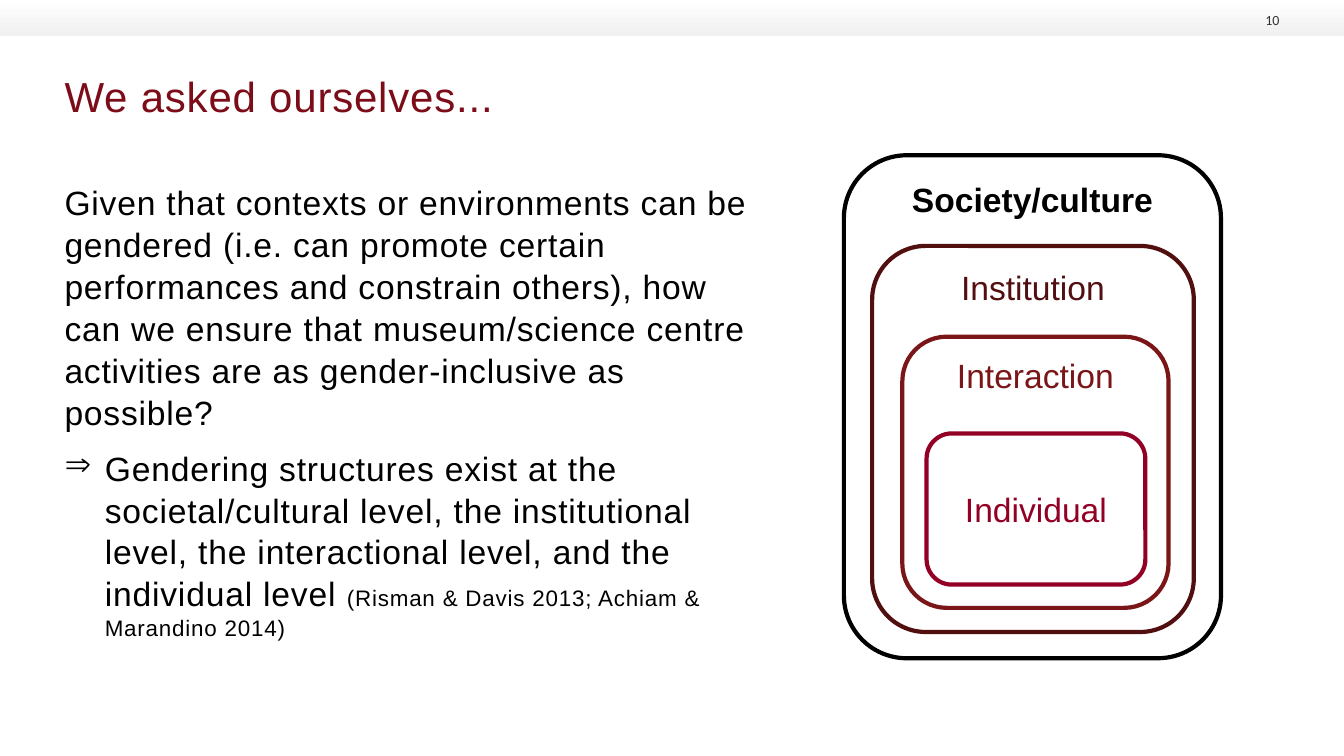
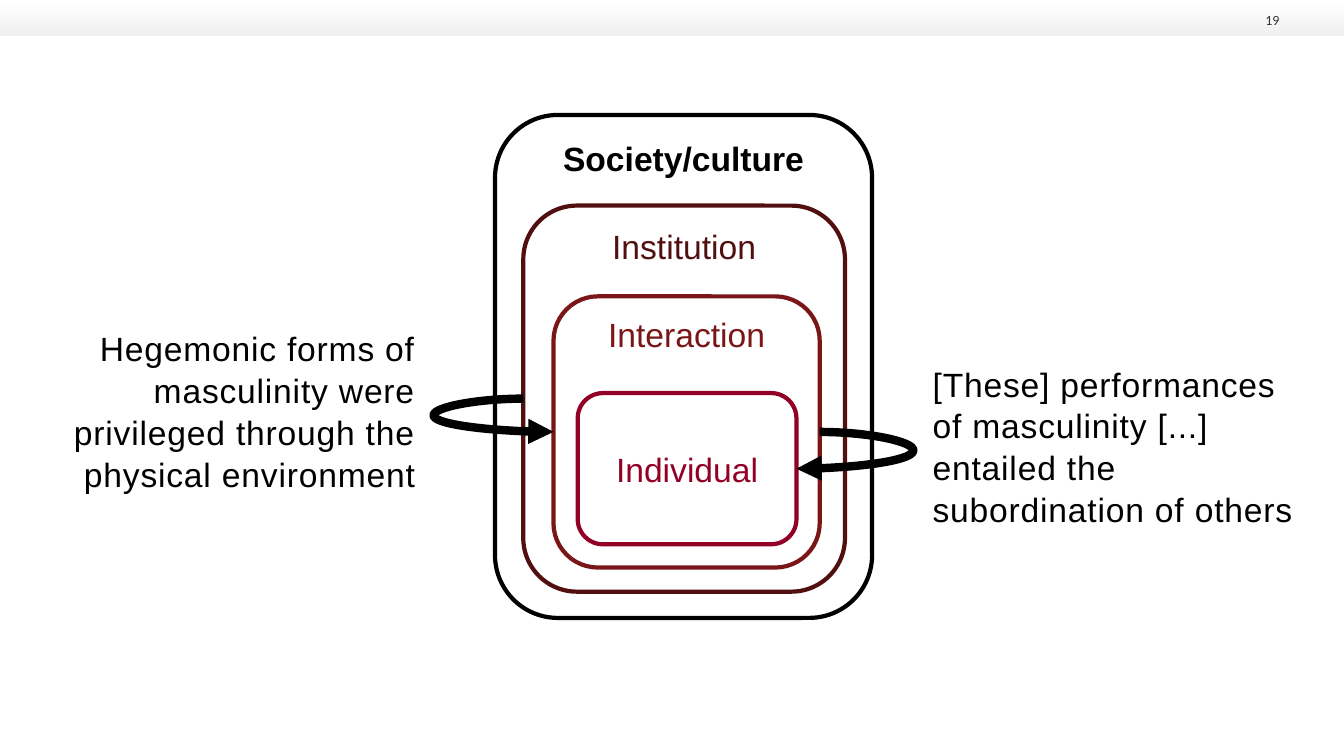
from dataclasses import dataclass

from lxml.etree import SubElement
from pptx import Presentation
from pptx.dml.color import RGBColor
from pptx.enum.shapes import MSO_CONNECTOR, MSO_SHAPE
from pptx.enum.text import MSO_ANCHOR, PP_ALIGN
from pptx.oxml.ns import qn
from pptx.util import Inches, Pt


@dataclass(frozen=True)
class Theme:
    """Colours, fonts and type sizes shared by the slides."""
    ink: str = "000000"
    paper: str = "FFFFFF"
    band_end: str = "EFF0EF"
    title: str = "7C0C17"
    number: str = "333333"
    institution: str = "520F10"
    interaction: str = "7A1618"
    individual: str = "920026"
    font: str = "Arial"
    number_font: str = "Calibri"
    title_size: int = 30
    body_size: int = 24
    citation_size: int = 16
    number_size: int = 10
    outline: int = 3
    arrow: int = 6
    tracking: int = 60
    line_spacing: float = 1.04
    paragraph_gap: int = 10


THEME = Theme()
SLIDE_WIDTH, SLIDE_HEIGHT = 13.33, 7.5

LEVELS = [
    ("Society/culture", THEME.ink, (0, 0, 3.74, 4.99)),
    ("Institution", THEME.institution, (0.28, 0.9, 3.19, 3.83)),
    ("Interaction", THEME.interaction, (0.58, 1.8, 2.64, 2.69)),
    ("Individual", THEME.individual, (0.82, 2.76, 2.17, 1.5)),
]


def rgb(colour):
    """Turn a hex string into a colour."""
    return RGBColor.from_string(colour)


def add_run(paragraph, text, size, colour=THEME.ink, font=THEME.font,
            bold=False, tracking=0):
    """Append one formatted run."""
    run = paragraph.add_run()
    run.text = text
    run.font.name = font
    run.font.size = Pt(size)
    run.font.bold = bold
    run.font.color.rgb = rgb(colour)
    if tracking:
        run.font._element.set("spc", str(tracking))


def add_frame(slide, box, anchor=MSO_ANCHOR.TOP):
    """Add a wrapping text box without insets and return its frame."""
    frame = slide.shapes.add_textbox(*map(Inches, box)).text_frame
    frame.word_wrap = True
    frame.vertical_anchor = anchor
    frame.margin_left = frame.margin_right = 0
    frame.margin_top = frame.margin_bottom = 0
    return frame


def add_prose(slide, box, text, align=PP_ALIGN.LEFT, size=THEME.body_size,
              colour=THEME.ink):
    """Place tracked prose in a box and return its frame."""
    frame = add_frame(slide, box)
    paragraph = frame.paragraphs[0]
    paragraph.alignment = align
    paragraph.line_spacing = THEME.line_spacing
    add_run(paragraph, text, size, colour, tracking=THEME.tracking)
    return frame


def add_conclusion(frame, statement, citation):
    """Append an arrow-bulleted statement with its citation."""
    paragraph = frame.add_paragraph()
    paragraph.line_spacing = THEME.line_spacing
    paragraph.space_before = Pt(THEME.paragraph_gap)
    properties = paragraph._p.get_or_add_pPr()
    properties.set("marL", str(Inches(0.4)))
    properties.set("indent", str(-Inches(0.4)))
    SubElement(properties, qn("a:buChar")).set("char", "⇒")
    for text, size in ((statement, THEME.body_size),
                       (citation, THEME.citation_size)):
        add_run(paragraph, text, size, tracking=THEME.tracking)


def add_header(slide, number):
    """Draw the gradient band and the slide number."""
    band = slide.shapes.add_shape(
        MSO_SHAPE.RECTANGLE, 0, 0, Inches(SLIDE_WIDTH), Inches(0.36))
    band.shadow.inherit = False
    band.line.fill.background()
    band.fill.gradient()
    band.fill.gradient_angle = 270
    for stop, colour in zip(band.fill.gradient_stops,
                            (THEME.paper, THEME.band_end)):
        stop.color.rgb = rgb(colour)
    paragraph = add_frame(
        slide, (12.27, 0.09, 0.42, 0.19), MSO_ANCHOR.BOTTOM).paragraphs[0]
    paragraph.alignment = PP_ALIGN.RIGHT
    add_run(paragraph, number, THEME.number_size, THEME.number,
            THEME.number_font)


def add_level(slide, label, colour, box, outermost, innermost):
    """Draw one labelled level of the nested model."""
    level = slide.shapes.add_shape(
        MSO_SHAPE.ROUNDED_RECTANGLE, *map(Inches, box))
    level.shadow.inherit = False
    level.fill.solid()
    level.fill.fore_color.rgb = rgb(THEME.paper)
    level.line.color.rgb = rgb(colour)
    level.line.width = Pt(THEME.outline)
    frame = level.text_frame
    frame.vertical_anchor = MSO_ANCHOR.MIDDLE if innermost else MSO_ANCHOR.TOP
    paragraph = frame.paragraphs[0]
    paragraph.alignment = PP_ALIGN.CENTER
    add_run(paragraph, label, THEME.body_size, colour, bold=outermost)


def add_nested_levels(slide, left, top):
    """Draw the nested levels and return their boxes by label."""
    boxes = {}
    last = len(LEVELS) - 1
    for index, (label, colour, (dx, dy, width, height)) in enumerate(LEVELS):
        boxes[label] = (left + dx, top + dy, width, height)
        add_level(slide, label, colour, boxes[label], index == 0, index == last)
    return boxes


def side_middle(box, right):
    """Return the middle of a box's left or right side."""
    left, top, width, height = box
    return left + width * right, top + height / 2


def add_loop_arrow(slide, outer, inner, right, bulge_x):
    """Loop an arrow from the outer to the inner box through bulge_x."""
    start, end = side_middle(outer, right), side_middle(inner, right)
    arrow = slide.shapes.add_connector(
        MSO_CONNECTOR.CURVE, *map(Inches, start + end))
    arrow.line.color.rgb = rgb(THEME.ink)
    arrow.line.width = Pt(THEME.arrow)
    SubElement(arrow.line._get_or_add_ln(), qn("a:tailEnd")).set(
        "type", "triangle")
    properties = arrow._element.spPr
    SubElement(properties, qn("a:effectLst"))
    geometry = properties.find(qn("a:prstGeom"))
    adjustments = geometry.find(qn("a:avLst"))
    if adjustments is None:
        adjustments = SubElement(geometry, qn("a:avLst"))
    ratio = (bulge_x - start[0]) / (end[0] - start[0])
    guide = SubElement(adjustments, qn("a:gd"))
    guide.set("name", "adj1")
    guide.set("fmla", f"val {round(ratio * 100000)}")


def build_question_slide(slide):
    """Build the slide that asks the guiding question."""
    add_header(slide, "10")
    add_prose(slide, (0.64, 0.68, 12.04, 0.95), "We asked ourselves...",
              size=THEME.title_size, colour=THEME.title)
    question = add_prose(
        slide, (0.64, 1.79, 6.9, 5.11),
        "Given that contexts or environments can be gendered (i.e. can "
        "promote certain performances and constrain others), how can we "
        "ensure that museum/science centre activities are as "
        "gender-inclusive as possible?")
    add_conclusion(
        question,
        "Gendering structures exist at the societal/cultural level, the "
        "institutional level, the interactional level, and the individual "
        "level ",
        "(Risman & Davis 2013; Achiam & Marandino 2014)")
    add_nested_levels(slide, 8.37, 1.54)


def build_influence_slide(slide):
    """Build the slide that shows influences between levels."""
    add_header(slide, "19")
    add_prose(slide, (0.37, 3.24, 3.75, 1.73),
              "Hegemonic forms of masculinity were privileged through the "
              "physical environment", PP_ALIGN.RIGHT)
    boxes = add_nested_levels(slide, 4.91, 1.14)
    add_loop_arrow(slide, boxes["Institution"], boxes["Interaction"],
                   False, 4.3)
    add_loop_arrow(slide, boxes["Interaction"], boxes["Individual"],
                   True, 9.06)
    add_prose(slide, (9.25, 3.59, 3.75, 1.73),
              "[These] performances of masculinity [...] entailed the "
              "subordination of others")


def main():
    """Build and save the presentation."""
    presentation = Presentation()
    presentation.slide_width = Inches(SLIDE_WIDTH)
    presentation.slide_height = Inches(SLIDE_HEIGHT)
    blank = presentation.slide_layouts[6]
    for build in (build_question_slide, build_influence_slide):
        build(presentation.slides.add_slide(blank))
    presentation.save("out.pptx")


if __name__ == "__main__":
    main()
